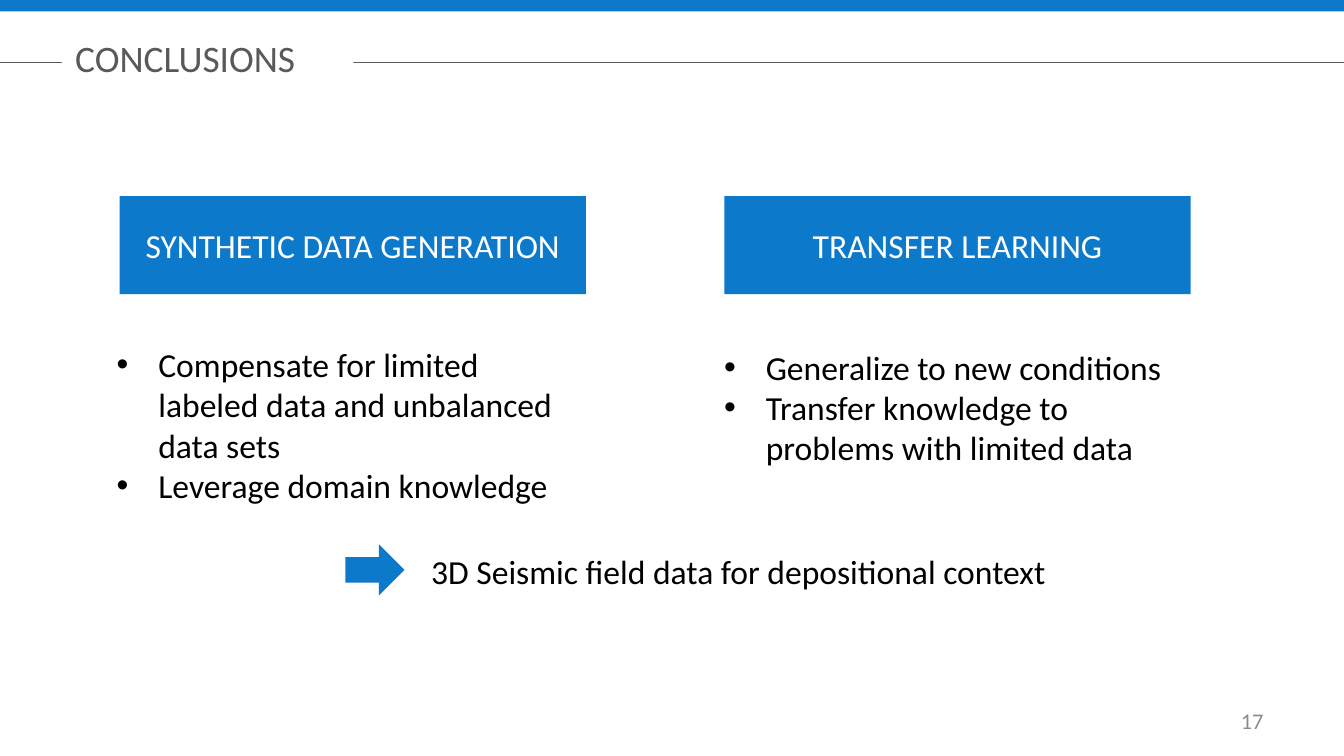
from dataclasses import dataclass

from lxml import etree
from pptx import Presentation
from pptx.dml.color import RGBColor
from pptx.enum.shapes import MSO_CONNECTOR, MSO_SHAPE
from pptx.enum.text import MSO_ANCHOR, MSO_AUTO_SIZE, PP_ALIGN
from pptx.oxml.ns import qn
from pptx.util import Inches, Pt

RECT, ARROW = MSO_SHAPE.RECTANGLE, MSO_SHAPE.RIGHT_ARROW
LEFT, MID, RIGHT = PP_ALIGN.LEFT, PP_ALIGN.CENTER, PP_ALIGN.RIGHT
TOP, CENTER = MSO_ANCHOR.TOP, MSO_ANCHOR.MIDDLE

# The slide is a grid of square cells, a tenth of an inch each.
CELL = Inches(0.1)
COLS, ROWS = 100, 56.25


@dataclass(frozen=True)
class Theme:
    font: str = "Calibri"
    blue: str = "0D79CA"
    white: str = "FFFFFF"
    black: str = "000000"
    gray: str = "595959"
    pale: str = "8C8C8C"
    title: int = 20
    body: int = 18
    small: int = 12


@dataclass(frozen=True)
class Box:
    col: float
    row: float
    wide: float
    high: float

    def emu(self) -> list[int]:
        return [cells(n) for n in (self.col, self.row, self.wide, self.high)]


@dataclass(frozen=True)
class Topic:
    head: str
    head_box: Box
    points: tuple[str, ...]
    list_box: Box


THEME = Theme()
HEAD_ROW, HEAD_WIDE, HEAD_HIGH = 14.6, 34.7, 7.3
TOPICS = (
    Topic(
        "SYNTHETIC DATA GENERATION",
        Box(8.9, HEAD_ROW, HEAD_WIDE, HEAD_HIGH),
        ("Compensate for limited labeled data and unbalanced data sets",
         "Leverage domain knowledge"),
        Box(7.7, 25.1, 35.9, 16.2),
    ),
    Topic(
        "TRANSFER LEARNING",
        Box(53.9, HEAD_ROW, HEAD_WIDE, HEAD_HIGH),
        ("Generalize to new conditions",
         "Transfer knowledge to problems with limited data"),
        Box(52.9, 25.3, 35.7, 10.1),
    ),
)


def cells(count: float) -> int:
    return round(count * CELL)


def color(code: str) -> RGBColor:
    return RGBColor.from_string(code)


def bullet(para) -> None:
    props = para._p.get_or_add_pPr()
    props.set("marL", str(cells(3.1)))
    props.set("indent", str(-cells(3.1)))
    etree.SubElement(props, qn("a:buFont")).set("typeface", "Arial")
    etree.SubElement(props, qn("a:buChar")).set("char", "•")


def write(shape, *lines: str, size: int = THEME.body, tint: str = THEME.black,
          align=LEFT, anchor=TOP, dots: bool = False) -> None:
    """Fill a shape with one paragraph for each line."""
    frame = shape.text_frame
    frame.word_wrap = True
    frame.auto_size = MSO_AUTO_SIZE.NONE
    frame.vertical_anchor = anchor
    for i, line in enumerate(lines):
        para = frame.paragraphs[0] if i == 0 else frame.add_paragraph()
        para.alignment = align
        run = para.add_run()
        run.text = line
        run.font.name = THEME.font
        run.font.size = Pt(size)
        run.font.color.rgb = color(tint)
        if dots:
            bullet(para)


def block(slide, box: Box, kind=RECT):
    """Add a flat blue shape."""
    shape = slide.shapes.add_shape(kind, *box.emu())
    shape.shadow.inherit = False
    shape.fill.solid()
    shape.fill.fore_color.rgb = color(THEME.blue)
    shape.line.fill.background()
    return shape


def label(slide, box: Box, *lines: str, **style) -> None:
    write(slide.shapes.add_textbox(*box.emu()), *lines, **style)


def header(slide, text: str) -> None:
    """Set the title on a white patch that breaks the rule behind it."""
    title = slide.shapes.title
    title.left, title.top, title.width, title.height = Box(4.6, 2.7, 21.7, 3.1).emu()
    title.fill.solid()
    title.fill.fore_color.rgb = color(THEME.white)
    write(title, text, size=THEME.title, tint=THEME.gray, anchor=CENTER)

    y = cells(4.65)
    rule = slide.shapes.add_connector(MSO_CONNECTOR.STRAIGHT, 0, y, cells(COLS), y)
    rule.line.color.rgb = color(THEME.gray)
    rule.line.width = Pt(0.75)
    etree.SubElement(rule.element.spPr, qn("a:effectLst"))
    title.element.addprevious(rule.element)

    block(slide, Box(0, 0, COLS, 0.85))


def column(slide, topic: Topic) -> None:
    write(block(slide, topic.head_box), topic.head,
          tint=THEME.white, align=MID, anchor=CENTER)
    label(slide, topic.list_box, *topic.points, dots=True)


def main() -> None:
    deck = Presentation()
    deck.slide_width, deck.slide_height = cells(COLS), cells(ROWS)
    slide = deck.slides.add_slide(deck.slide_layouts[5])
    header(slide, "CONCLUSIONS")
    for topic in TOPICS:
        column(slide, topic)
    block(slide, Box(25.7, 40.5, 4.4, 3.8), ARROW)
    label(slide, Box(31.1, 40.5, 65.2, 4),
          "3D Seismic field data for depositional context")
    label(slide, Box(71.7, 52.1, 23.3, 3), "17", size=THEME.small,
          tint=THEME.pale, align=RIGHT, anchor=CENTER)
    deck.save("out.pptx")


if __name__ == "__main__":
    main()
